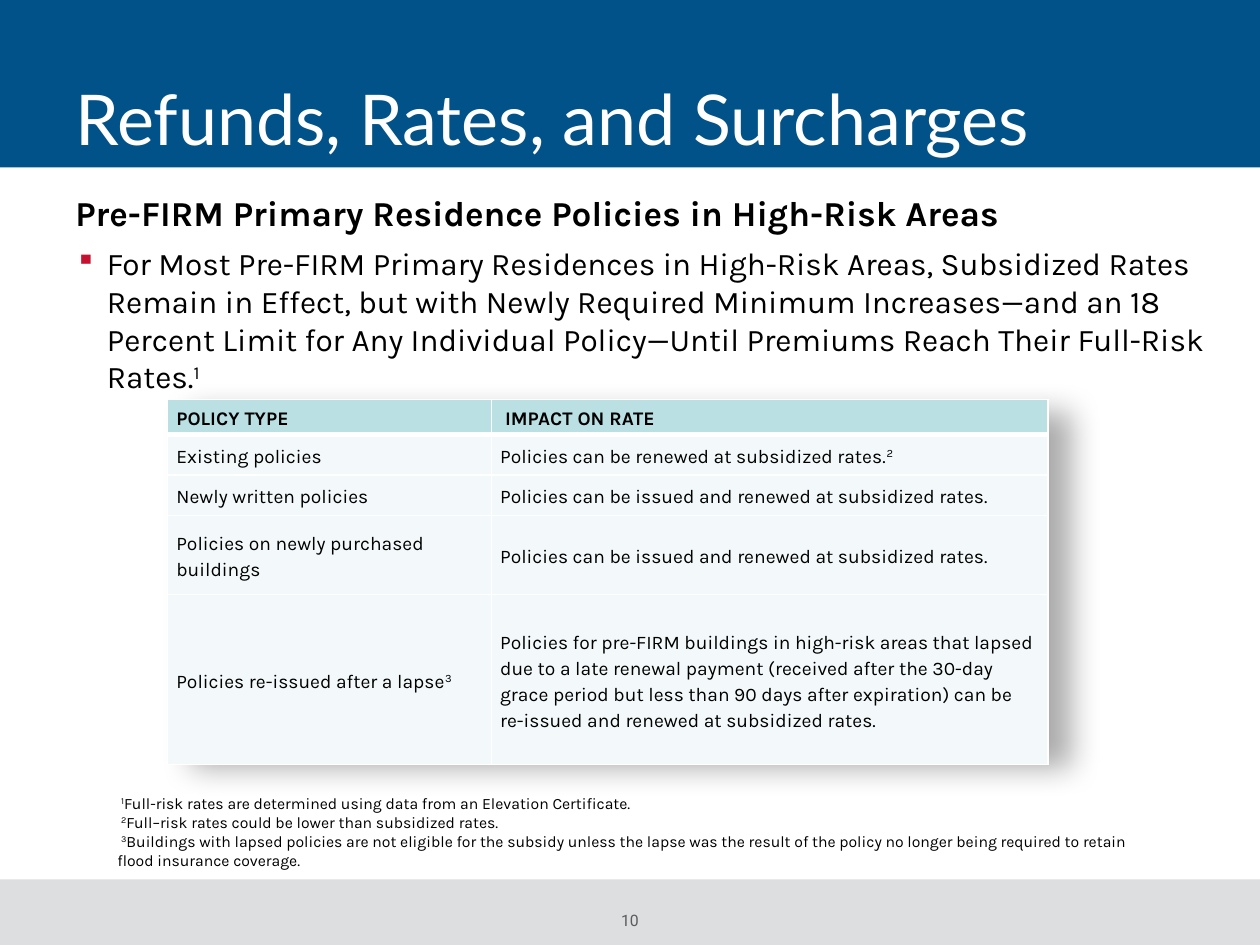
from lxml.etree import SubElement
from pptx import Presentation
from pptx.dml.color import RGBColor
from pptx.enum.shapes import MSO_SHAPE as Shape
from pptx.enum.text import MSO_ANCHOR as Anchor, MSO_AUTO_SIZE as AutoSize, PP_ALIGN as Align
from pptx.oxml.ns import qn
from pptx.util import Emu, Inches, Pt

# Content: text between carets is superscript
TITLE = "Refunds, Rates, and Surcharges"
HEADING = "Pre-FIRM Primary Residence Policies in High-Risk Areas"
BULLET = ("For Most Pre-FIRM Primary Residences in High-Risk Areas, Subsidized Rates "
          "Remain in Effect, but with Newly Required Minimum Increases—and an 18 Percent "
          "Limit for Any Individual Policy—Until Premiums Reach Their Full-Risk Rates.^1^")
RENEWED = "Policies can be issued and renewed at subsidized rates."
ROWS = [
    ("POLICY TYPE", " IMPACT ON RATE"),
    ("Existing policies", "Policies can be renewed at subsidized rates.^2^"),
    ("Newly written policies", RENEWED),
    ("Policies on newly purchased buildings", RENEWED),
    ("Policies re-issued after a lapse^3^",
     "Policies for pre-FIRM buildings in high-risk areas that lapsed due to a late renewal "
     "payment (received after the 30-day grace period but less than 90 days after expiration) "
     "can be re-issued and renewed at subsidized rates."),
]
FOOTNOTES = [
    " ^1^Full-risk rates are determined using data from an Elevation Certificate.",
    " ^2^Full–risk rates could be lower than subsidized rates.",
    " ^3^Buildings with lapsed policies are not eligible for the subsidy unless the lapse was "
    "the result of the policy no longer being required to retain flood insurance coverage.",
]
PAGE_NUMBER = "10"

COLORS = {"banner": "005288", "footer": "DDDEDF", "number": "5B5C5E", "white": "FFFFFF",
          "text": "000000", "bullet": "C41230", "header": "BBE0E3", "row": "F3F9FA"}
WIDTH, HEIGHT = 10, 7.5
BANNER_HEIGHT, FOOTER_HEIGHT, MARGIN = 1.33, 0.52, 0.5
TABLE_LEFT, TABLE_TOP = 1.33, 3.17
COLUMN_WIDTHS = [2.57, 4.42]
ROW_HEIGHTS = [0.28, 0.32, 0.32, 0.63, 1.35]


def color(name):
    return RGBColor.from_string(COLORS[name])


def add_text(para, text, size, font="Karla", fill="text", bold=False):
    for index, part in enumerate(text.split("^")):
        if part:
            span = para.add_run()
            span.text = part
            span.font.size, span.font.name, span.font.bold = Pt(size), font, bold
            span.font.color.rgb = color(fill)
            if index % 2:
                span.font._element.set("baseline", "30000")


def add_box(page, *place):
    frame = page.shapes.add_textbox(*map(Inches, place)).text_frame
    frame.word_wrap = True
    return frame


def add_block(page, fill, *place):
    block = page.shapes.add_shape(Shape.RECTANGLE, *map(Inches, place))
    block.shadow.inherit = False
    block.fill.solid()
    block.fill.fore_color.rgb = color(fill)
    block.line.fill.background()
    return block


def add_solid(parent, name):
    fill = SubElement(parent, qn("a:solidFill"))
    return SubElement(fill, qn("a:srgbClr"), val=COLORS[name])


def add_shadow(block):
    effects = block._element.spPr.find(qn("a:effectLst"))
    shadow = SubElement(effects, qn("a:outerShdw"), blurRad=str(Pt(17.5)), dist=str(Pt(15)),
                        dir=str(28 * 60000), algn="tl", rotWithShape="0")
    tint = SubElement(shadow, qn("a:srgbClr"), val=COLORS["text"])
    SubElement(tint, qn("a:alpha"), val="32000")


def add_bullet(para):
    props = para._p.get_or_add_pPr()
    props.set("marL", str(Inches(0.25)))
    props.set("indent", str(-Inches(0.25)))
    tint = SubElement(props, qn("a:buClr"))
    SubElement(tint, qn("a:srgbClr"), val=COLORS["bullet"])
    SubElement(props, qn("a:buSzPct"), val="90000")
    SubElement(props, qn("a:buChar"), char="▪")


def format_cell(cell, text, is_header):
    props = cell._tc.get_or_add_tcPr()
    for side in "LRTB":
        weight = 3 if is_header and side == "B" else 1
        add_solid(SubElement(props, qn(f"a:ln{side}"), w=str(Pt(weight))), "white")
    cell.fill.solid()
    cell.fill.fore_color.rgb = color("header" if is_header else "row")
    cell.vertical_anchor = Anchor.MIDDLE
    cell.margin_left = cell.margin_right = Inches(0.07)
    cell.margin_top, cell.margin_bottom = Inches(0.01), Emu(0)
    para = cell.text_frame.paragraphs[0]
    para.line_spacing, para.space_after = 1.15, Pt(10)
    add_text(para, text, 11, bold=is_header)


deck = Presentation()
deck.slide_width, deck.slide_height = Inches(WIDTH), Inches(HEIGHT)
page = deck.slides.add_slide(deck.slide_layouts[5])

# Footer band, page number and banner
add_block(page, "footer", 0, HEIGHT - FOOTER_HEIGHT, WIDTH, FOOTER_HEIGHT)
frame = add_box(page, WIDTH * 5 / 12, 7.23, WIDTH / 6, 0.15)
frame.margin_left = frame.margin_right = frame.margin_top = frame.margin_bottom = 0
frame.auto_size = AutoSize.SHAPE_TO_FIT_TEXT
frame.paragraphs[0].alignment = Align.CENTER
add_text(frame.paragraphs[0], PAGE_NUMBER, 9, "Roboto", "number")
add_block(page, "banner", 0, 0, WIDTH, BANNER_HEIGHT)

# Table on a shadowed panel
table_width = sum(COLUMN_WIDTHS)
add_shadow(add_block(page, "white", TABLE_LEFT, TABLE_TOP, table_width, 2.83))
table = page.shapes.add_table(len(ROWS), len(COLUMN_WIDTHS), *map(
    Inches, (TABLE_LEFT, TABLE_TOP, table_width, sum(ROW_HEIGHTS)))).table
table.horz_banding = False
for column, width in zip(table.columns, COLUMN_WIDTHS):
    column.width = Inches(width)
for row, height, texts in zip(table.rows, ROW_HEIGHTS, ROWS):
    row.height = Inches(height)
    for cell, text in zip(row.cells, texts):
        format_cell(cell, text, texts is ROWS[0])

# Title, raised above the banner
title = page.shapes.title
page.shapes._spTree.append(title._element)
title.left, title.top, title.width, title.height = map(
    Inches, (MARGIN, 0.05, WIDTH - 2 * MARGIN, 1.26))
title.text_frame.vertical_anchor = Anchor.BOTTOM
title.text_frame.auto_size = AutoSize.NONE
para = title.text_frame.paragraphs[0]
para.alignment, para.line_spacing = Align.LEFT, 0.8
add_text(para, TITLE, 40, "Lato", "white")

# Heading and bullet
frame = add_box(page, MARGIN, 1.47, 9.17, 5.4)
add_text(frame.paragraphs[0], HEADING, 20, bold=True)
para = frame.add_paragraph()
para.space_before = Pt(6)
add_bullet(para)
add_text(para, BULLET, 18)

# Footnotes
frame = add_box(page, WIDTH / 12, 6.25, WIDTH * 5 / 6, 0.71)
frame.auto_size = AutoSize.SHAPE_TO_FIT_TEXT
for index, note in enumerate(FOOTNOTES):
    para = frame.add_paragraph() if index else frame.paragraphs[0]
    add_text(para, note, 9)

deck.save("out.pptx")
